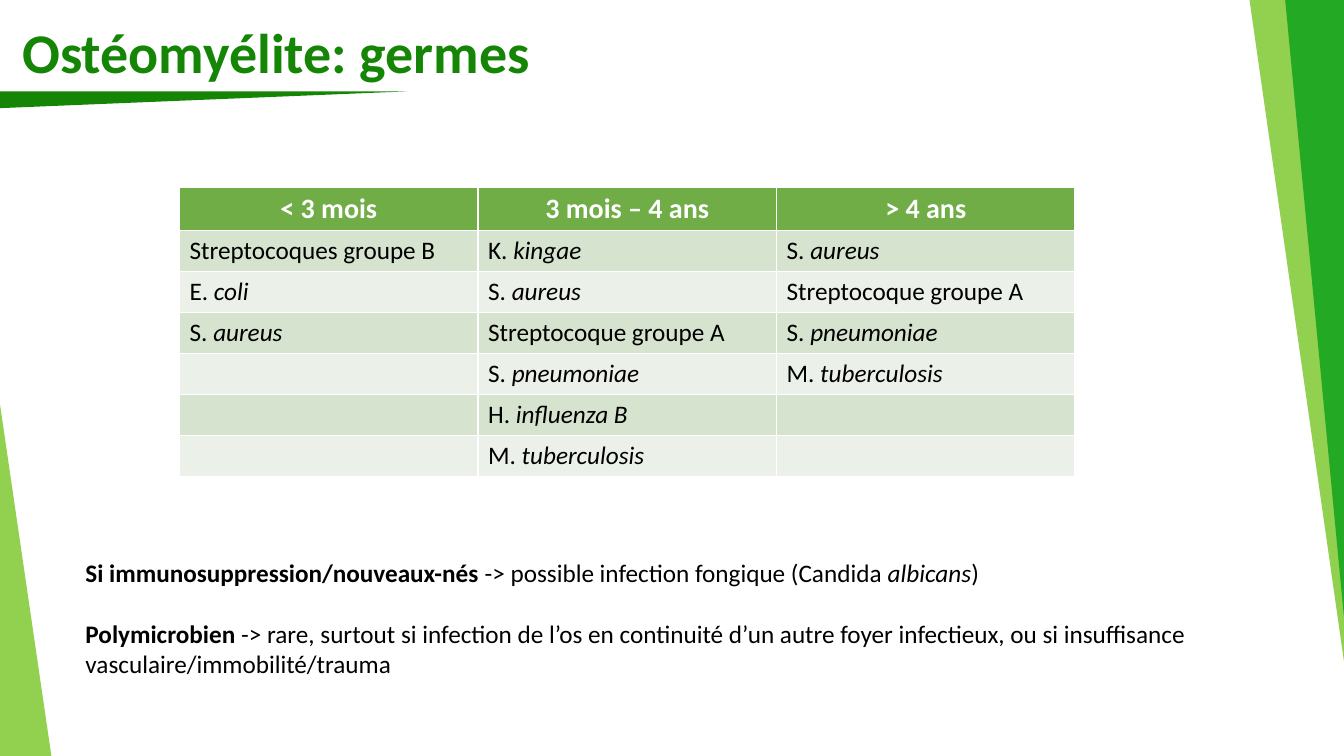
from pptx import Presentation
from pptx.dml.color import RGBColor
from pptx.enum.shapes import MSO_SHAPE
from pptx.enum.text import MSO_AUTO_SIZE, PP_ALIGN
from pptx.util import Pt

PX = 9525
TRIANGLE = MSO_SHAPE.RIGHT_TRIANGLE
CENTER = PP_ALIGN.CENTER
FIT_SHAPE = MSO_AUTO_SIZE.SHAPE_TO_FIT_TEXT
LIME = RGBColor(0x92, 0xD0, 0x50)
GREEN = RGBColor(0x23, 0xA9, 0x23)
DARK_GREEN = RGBColor(0x14, 0x85, 0x05)
HEADER_GREEN = RGBColor(0x70, 0xAD, 0x47)
BAND_DARK = RGBColor(0xD5, 0xE3, 0xCF)
BAND_LIGHT = RGBColor(0xEB, 0xF1, 0xE9)
WHITE = RGBColor(0xFF, 0xFF, 0xFF)
BLACK = RGBColor(0x00, 0x00, 0x00)


def style_font(font, size, color):
    font.name = "Calibri"
    font.size = Pt(size)
    font.color.rgb = color


def add_text_box(left, top, width, height):
    box = page.shapes.add_textbox(left * PX, top * PX, width * PX, height * PX)
    box.text_frame.word_wrap = True
    box.text_frame.auto_size = FIT_SHAPE
    return box.text_frame


deck = Presentation()
deck.slide_width = 1280 * PX
deck.slide_height = 720 * PX
page = deck.slides.add_slide(deck.slide_layouts[6])

wedges = [
    (1190, 0, 90, 630, 180, LIME),
    (0, 385, 49, 335, 0, LIME),
    (1224, 0, 56, 588, 180, GREEN),
    (186, -99, 16, 388, 90, DARK_GREEN),
]
for left, top, width, height, rotation, color in wedges:
    wedge = page.shapes.add_shape(TRIANGLE, left * PX, top * PX, width * PX, height * PX)
    wedge.rotation = rotation
    wedge.shadow.inherit = False
    wedge.fill.solid()
    wedge.fill.fore_color.rgb = color
    wedge.line.fill.background()

title = add_text_box(12, 12, 846, 74).paragraphs[0]
title.text = "Ostéomyélite: germes"
style_font(title.font, 40, DARK_GREEN)
title.font.bold = True

germs_by_age = {
    "< 3 mois": ["Streptocoques groupe B", "E. |coli", "S. |aureus"],
    "3 mois – 4 ans": ["K. |kingae", "S. |aureus", "Streptocoque groupe A",
                       "S. |pneumoniae", "H. |influenza B", "M. |tuberculosis"],
    "> 4 ans": ["S. |aureus", "Streptocoque groupe A", "S. |pneumoniae", "M. |tuberculosis"],
}
row_count = 1 + max(len(germs) for germs in germs_by_age.values())
table = page.shapes.add_table(row_count, len(germs_by_age), 171 * PX, 178 * PX,
                              853 * PX, 39 * row_count * PX).table

for column, (age, germs) in enumerate(germs_by_age.items()):
    for row in range(row_count):
        cell = table.cell(row, column)
        cell.fill.solid()
        para = cell.text_frame.paragraphs[0]
        if row == 0:
            cell.fill.fore_color.rgb = HEADER_GREEN
            para.text = age
            para.alignment = CENTER
            style_font(para.font, 20, WHITE)
            para.font.bold = True
            continue
        cell.fill.fore_color.rgb = BAND_DARK if row % 2 else BAND_LIGHT
        style_font(para.font, 18, BLACK)
        if row <= len(germs):
            for part, words in enumerate(germs[row - 1].split("|")):
                span = para.add_run()
                span.text = words
                span.font.italic = part == 1

remarks = [
    [("Si immunosuppression/nouveaux-nés ", True, False),
     ("-> possible infection fongique (Candida ", False, False),
     ("albicans", False, True),
     (")", False, False)],
    [("Polymicrobien ", True, False),
     ("-> rare, surtout si infection de l’os en continuité d’un autre foyer infectieux, "
      "ou si insuffisance vasculaire/immobilité/trauma", False, False)],
]
notes_frame = add_text_box(72, 526, 1152, 126)
for index, remark in enumerate(remarks):
    para = notes_frame.add_paragraph() if index else notes_frame.paragraphs[0]
    para.space_before = Pt(22 * index)
    style_font(para.font, 18, BLACK)
    for words, bold, italic in remark:
        span = para.add_run()
        span.text = words
        span.font.bold = bold
        span.font.italic = italic

deck.save("out.pptx")
